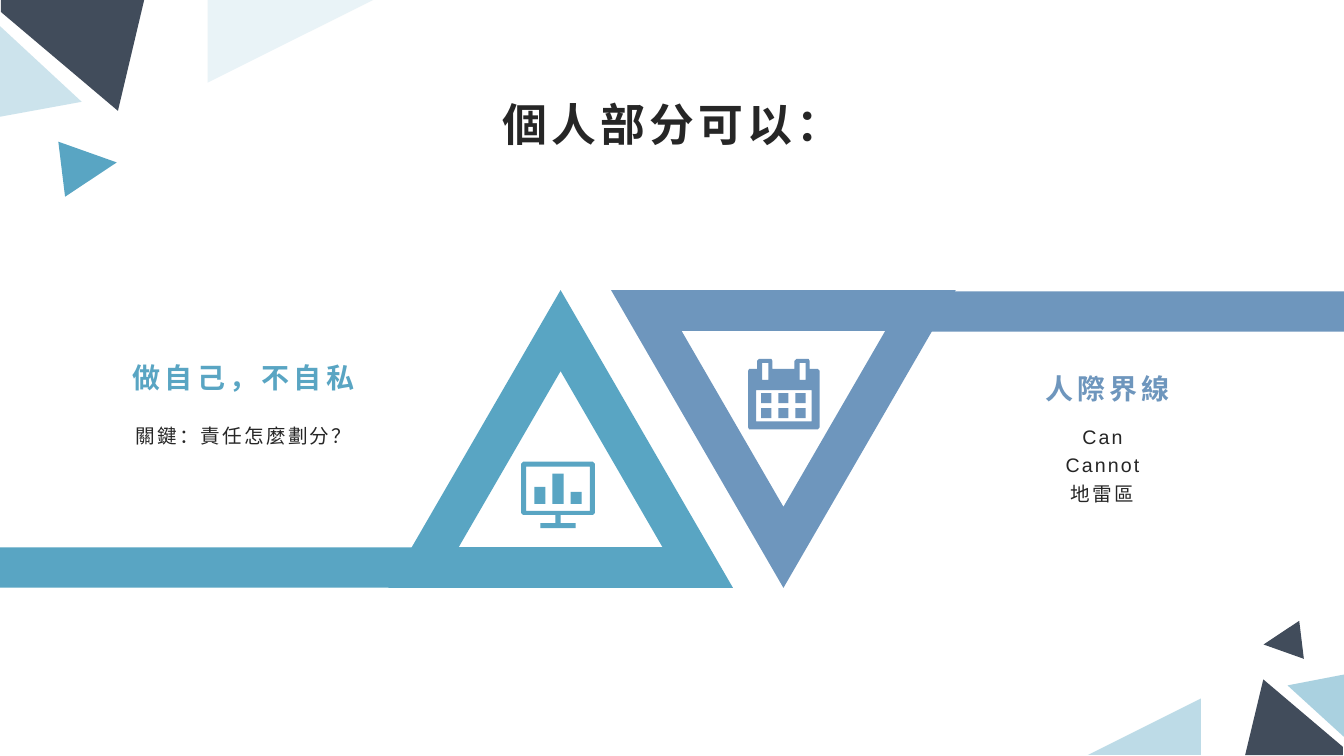
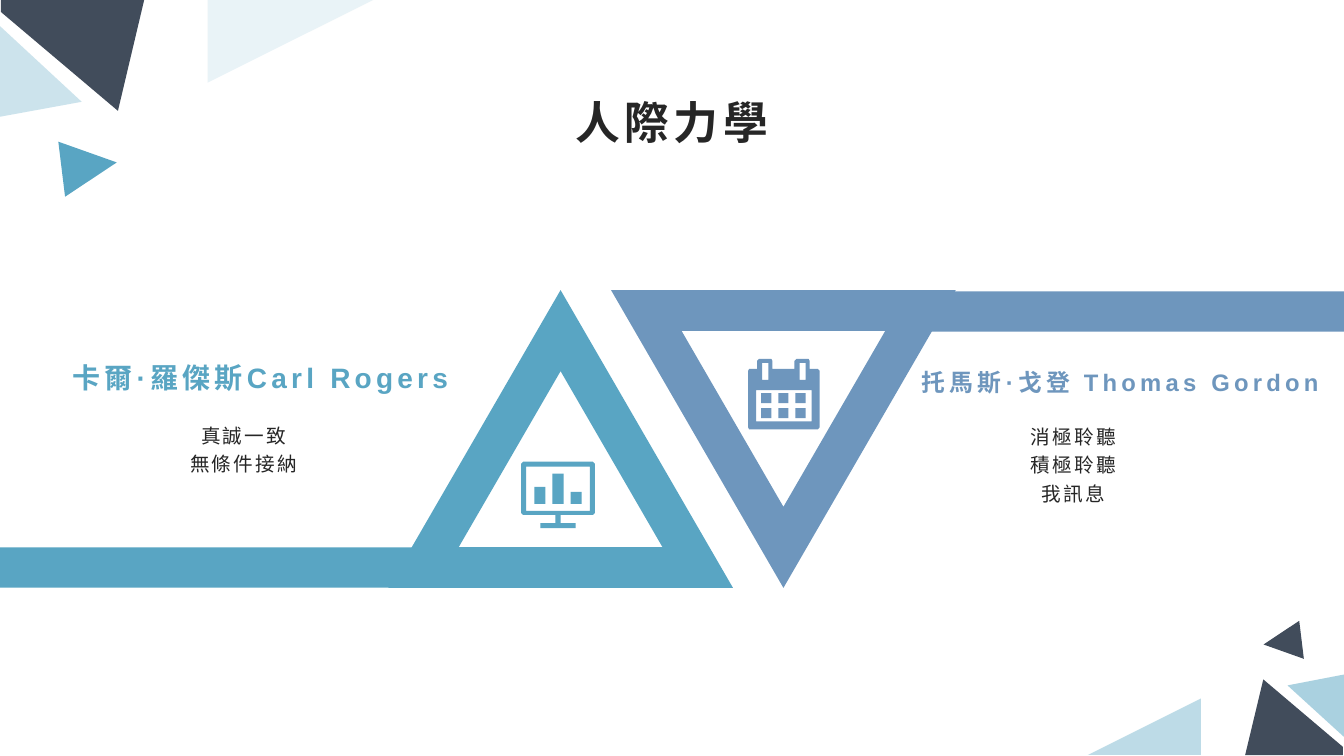
"""Build two slides that pair ideas around interlocking triangles."""
from pptx import Presentation
from pptx.dml.color import RGBColor
from pptx.enum.shapes import MSO_SHAPE as Preset
from pptx.enum.text import MSO_ANCHOR as Anchor, MSO_AUTO_SIZE as AutoSize, PP_ALIGN as Align
from pptx.oxml.ns import qn
from pptx.util import Inches, Pt
from lxml.etree import SubElement

COLORS = {
    "navy": "414C5B",
    "teal": "59A5C3",
    "blue": "6E96BD",
    "sky": "9BC9DB",
    "mist": "DEEDF3",
    "ink": "262626",
}

TEXT_STYLES = {
    "title": {"size": Pt(32), "bold": True, "spacing": 300, "anchor": Anchor.MIDDLE, "inset": 0.05},
    "heading": {"size": Pt(20), "bold": True, "spacing": 300, "anchor": Anchor.TOP, "inset": 0},
    "list": {"size": Pt(14), "bold": False, "spacing": 150, "anchor": Anchor.TOP, "inset": 0},
}

SHARDS = [
    ("navy", 100, [(1.43, 0), (1.17, 1.1), (0.01, 0.12), (0.01, 0)]),
    ("mist", 65, [(3.7, 0), (2.06, 0.82), (2.06, 0)]),
    ("sky", 51, [(0.81, 1.01), (-0.01, 1.16), (-0.01, 0.25)]),
    ("navy", 100, [(12.35, 7.49), (12.53, 6.74), (13.32, 7.41), (13.32, 7.49)]),
    ("sky", 65, [(10.79, 7.49), (11.91, 6.93), (11.91, 7.49)]),
    ("teal", 51, [(12.77, 6.8), (13.34, 6.69), (13.34, 7.32)]),
]

SOLIDS = [
    (Preset.ISOSCELES_TRIANGLE, "teal", (0.61, 1.37, 0.55, 0.55), 83),
    (Preset.ISOSCELES_TRIANGLE, "navy", (12.53, 6.18, 0.38, 0.38), 263),
    (Preset.RECTANGLE, "blue", (9.23, 2.89, 4.1, 0.4), 0),
    (Preset.RECTANGLE, "teal", (0, 5.43, 6.11, 0.4), 0),
]

FRAMES = [
    ("blue", (6.41, 3.08, 2.72, 2.35), 180),
    ("teal", (4.2, 3.28, 2.72, 2.35), 0),
]

MONITOR_OUTLINE = [
    (5.19, 4.58), (5.88, 4.58), (5.9, 4.6), (5.9, 5.09), (5.88, 5.11), (5.56, 5.11),
    (5.56, 5.19), (5.71, 5.19), (5.71, 5.24), (5.36, 5.24), (5.36, 5.19), (5.51, 5.19),
    (5.51, 5.11), (5.19, 5.11), (5.17, 5.09), (5.17, 4.6),
]
MONITOR_PANES = [
    (5.22, 4.63, 5.85, 5.07),
    (5.3, 4.83, 5.41, 5),
    (5.48, 4.7, 5.59, 5),
    (5.66, 4.88, 5.77, 5),
]
CALENDAR_OUTLINE = [
    (7.53, 3.56), (7.65, 3.56), (7.66, 3.58), (7.66, 3.66), (7.88, 3.66), (7.88, 3.58),
    (7.9, 3.56), (8.02, 3.56), (8.03, 3.58), (8.03, 3.66), (8.11, 3.66), (8.13, 3.68),
    (8.13, 4.24), (8.11, 4.26), (7.43, 4.26), (7.42, 4.24), (7.42, 3.68), (7.43, 3.66),
    (7.51, 3.66), (7.51, 3.58),
]
CALENDAR_PANES = [
    (7.5, 3.87, 8.05, 4.18),
    (7.56, 3.6, 7.62, 3.77),
    (7.93, 3.6, 7.99, 3.77),
] + [(x, y, x + 0.1, y + 0.1) for y in (3.9, 4.05) for x in (7.55, 7.72, 7.89)]

ICONS = [
    ("teal", MONITOR_OUTLINE, MONITOR_PANES),
    ("blue", CALENDAR_OUTLINE, CALENDAR_PANES),
]

TITLE_BOX = (4.6, 0.83, 4.13, 0.69)
LEFT_LIST_BOX = (0.92, 4.16, 2.99, 1.08)
SLIDES = [
    [
        ("title", "ink", TITLE_BOX, ["個人部分可以："], {}),
        ("heading", "teal", (0.92, 3.51, 2.99, 0.54), ["做自己，不自私"], {}),
        ("list", "ink", LEFT_LIST_BOX, ["關鍵：責任怎麼劃分？"], {}),
        ("heading", "blue", (9.52, 3.62, 2.93, 0.54), ["人際界線"], {}),
        ("list", "ink", (9.44, 4.17, 2.99, 1.06), ["Can", "Cannot", "地雷區"], {}),
    ],
    [
        ("title", "ink", TITLE_BOX, ["人際力學"], {"leading": 1.1}),
        ("heading", "teal", (0.35, 3.51, 4.46, 0.54), ["卡爾·羅傑斯Carl Rogers"], {}),
        ("list", "ink", LEFT_LIST_BOX, ["真誠一致", "無條件接納"], {}),
        ("heading", "blue", (8.85, 3.62, 4.52, 0.54), ["托馬斯·戈登 Thomas Gordon"],
         {"size": Pt(17), "leading": 1.1}),
        ("list", "ink", (9.15, 4.17, 2.99, 1.25), ["消極聆聽", "積極聆聽", "我訊息"], {}),
    ],
]


def paint(shape, color, opacity=100):
    shape.shadow.inherit = False
    shape.fill.solid()
    shape.fill.fore_color.rgb = RGBColor.from_string(COLORS[color])
    shape.line.fill.background()
    if opacity < 100:
        tint = shape._element.spPr.find(qn("a:solidFill")).find(qn("a:srgbClr"))
        SubElement(tint, qn("a:alpha"), val=str(opacity * 1000))


def draw_outline(slide, contours):
    contours = [[(Inches(x), Inches(y)) for x, y in contour] for contour in contours]
    builder = slide.shapes.build_freeform(*contours[0][0], scale=1.0)
    for number, contour in enumerate(contours):
        if number:
            builder.move_to(*contour[0])
        builder.add_line_segments(contour[1:], close=True)
    return builder.convert_to_shape()


deck = Presentation()
deck.slide_width, deck.slide_height = Inches(13.33), Inches(7.5)
comparison_layout = deck.slide_layouts.get_by_name("Comparison")

for texts in SLIDES:
    slide = deck.slides.add_slide(comparison_layout)

    for color, opacity, corners in SHARDS:
        paint(draw_outline(slide, [corners]), color, opacity)

    for preset, color, box, angle in SOLIDS:
        solid = slide.shapes.add_shape(preset, *map(Inches, box))
        solid.rotation = angle
        paint(solid, color)

    for color, box, angle in FRAMES:
        frame = slide.shapes.add_shape(Preset.ISOSCELES_TRIANGLE, *map(Inches, box))
        frame.rotation = angle
        frame.shadow.inherit = False
        frame.fill.background()
        frame.line.color.rgb = RGBColor.from_string(COLORS[color])
        frame.line.width = Pt(29)
        SubElement(frame._element.spPr.find(qn("a:ln")), qn("a:miter"), lim="800000")

    for color, outline, panes in ICONS:
        pane_corners = [[(l, t), (r, t), (r, b), (l, b)] for l, t, r, b in panes]
        paint(draw_outline(slide, [outline] + pane_corners), color)

    for holder, (role, color, box, lines, changes) in zip(slide.placeholders, texts):
        style = {"leading": 1.2, **TEXT_STYLES[role], **changes}
        holder.left, holder.top, holder.width, holder.height = map(Inches, box)
        frame_format = {
            "word_wrap": True,
            "auto_size": AutoSize.NONE,
            "vertical_anchor": style["anchor"],
            "margin_top": Inches(style["inset"]),
            "margin_bottom": Inches(style["inset"]),
        }
        for name, value in frame_format.items():
            setattr(holder.text_frame, name, value)
        holder.text_frame.text = "\n".join(lines)

        paragraph_format = {
            "alignment": Align.CENTER,
            "line_spacing": style["leading"],
            "space_before": Pt(0),
            "space_after": Pt(0),
        }
        font_format = {"name": "Arial", "size": style["size"], "bold": style["bold"]}
        for paragraph in holder.text_frame.paragraphs:
            for name, value in paragraph_format.items():
                setattr(paragraph, name, value)
            properties = paragraph._p.get_or_add_pPr()
            properties.set("marL", "0")
            properties.set("indent", "0")
            SubElement(properties, qn("a:buNone"))
            run = paragraph.runs[0]
            for name, value in font_format.items():
                setattr(run.font, name, value)
            run.font.color.rgb = RGBColor.from_string(COLORS[color])
            run._r.get_or_add_rPr().set("spc", str(style["spacing"]))
            run._r.get_or_add_rPr().set("lang", "zh-CN")

deck.save("out.pptx")
